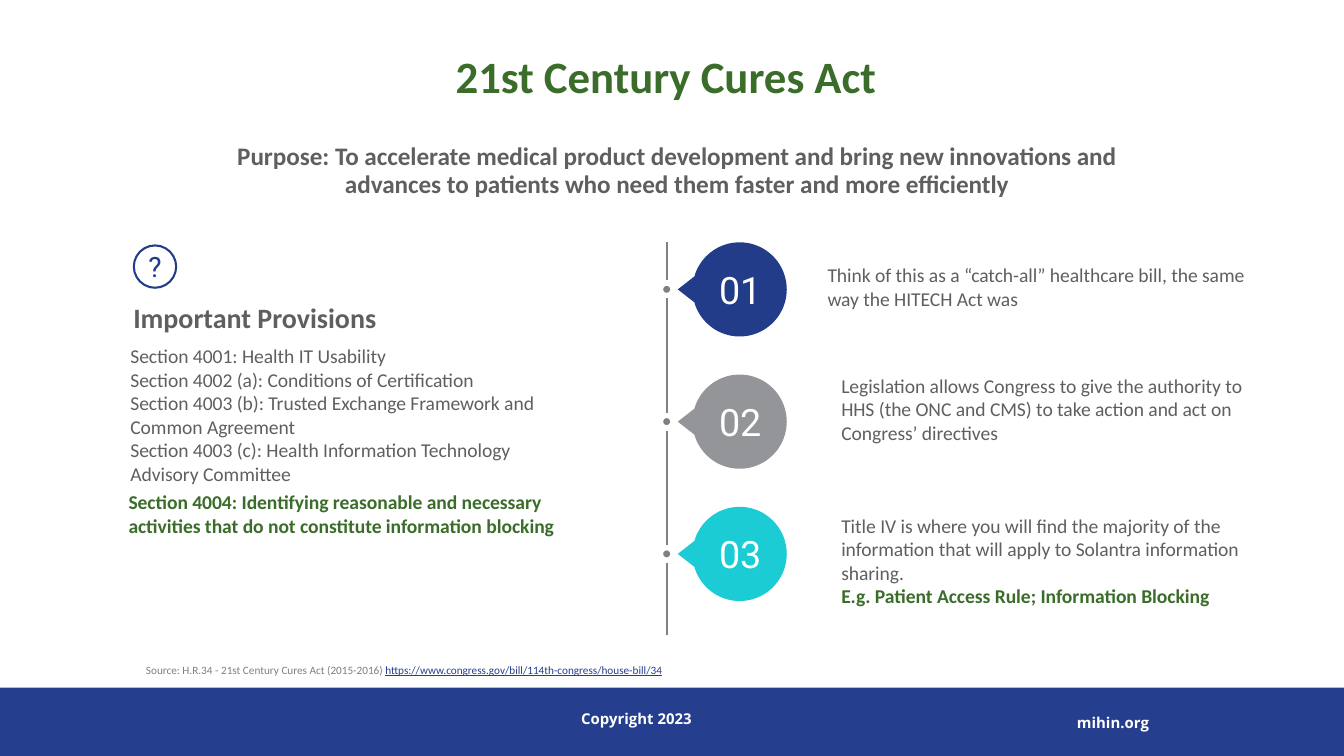
"""Build the 21st Century Cures Act overview slide."""
import math
from dataclasses import dataclass

from lxml import etree
from pptx import Presentation
from pptx import util as u
from pptx.dml import color
from pptx.enum import shapes, text
from pptx.oxml import ns

TITLE = "21st Century Cures Act"
PURPOSE = ("Purpose: To accelerate medical product development and bring new "
           "innovations and advances to patients who need them faster and more efficiently")
HEADING = "Important Provisions"
PROVISIONS = [
    "Section 4001: Health IT Usability",
    "Section 4002 (a): Conditions of Certification",
    "Section 4003 (b): Trusted Exchange Framework and Common Agreement",
    "Section 4003 (c): Health Information Technology Advisory Committee",
]
KEY_PROVISION = ("Section 4004: Identifying reasonable and necessary activities "
                 "that do not constitute information blocking")
STEPS = [
    ("01", "navy", (15.39, 4.85, 8.46, 1.14),
     [("Think of this as a “catch-all” healthcare bill, the same way the HITECH Act was", "body")]),
    ("02", "silver", (15.65, 6.93, 8.46, 1.6),
     [("Legislation allows Congress to give the authority to HHS (the ONC and CMS) "
       "to take action and act on Congress’ directives", "body")]),
    ("03", "cyan", (15.65, 9.58, 8.46, 2.06),
     [("Title IV is where you will find the majority of the information that will "
       "apply to Solantra information sharing.", "body"),
      ("E.g. Patient Access Rule; Information Blocking", "key")]),
]
SOURCE = [("Source: H.R.34 - 21st Century Cures Act (2015-2016) ", "source"),
          ("https://www.congress.gov/bill/114th-congress/house-bill/34", "link")]
FOOTER = [("Copyright 2023", (10.97, 13.41, 2.11, 0.33)),
          ("mihin.org", (20.04, 13.49, 1.68, 0.33))]

FIRST_Y, STEP_Y = 5.47, 2.5
LINE_X, LINE_TOP, LINE_BOTTOM = 12.6, 4.57, 12.01
DOT_SIZE, DOT_GAP = 0.13, 0.17
MARKER_X, MARKER_RADIUS, POINTER_REACH, POINTER_ANGLE = 13.98, 0.89, 1.17, 16


@dataclass(frozen=True)
class Theme:
    """Colours and type styles (size, font, colour, bold, underline)."""
    colors = {"navy": "223C89", "bar": "253E8E", "silver": "949599", "cyan": "1BCCD4",
              "green": "3B6D2A", "text": "5F5F5F", "line": "808080", "note": "7F7F7F",
              "white": "FFFFFF"}
    styles = {"title": (24, "Calibri", "green", True, False),
              "purpose": (13.5, "Calibri", "text", True, False),
              "heading": (15, "Calibri", "text", True, False),
              "body": (10.5, "Calibri", "text", False, False),
              "key": (10.5, "Calibri", "green", True, False),
              "number": (20.2, "Roboto", "white", False, False),
              "icon": (15, "Roboto", "navy", False, False),
              "source": (6, "Calibri", "note", False, False),
              "link": (6, "Calibri", "bar", False, True),
              "footer": (8, "Open Sans", "white", True, False)}


THEME = Theme()


def rgb(name):
    return color.RGBColor.from_string(THEME.colors[name])


def style_font(font, style):
    size, font.name, tint, font.bold, font.underline = THEME.styles[style]
    font.size = u.Pt(size)
    font.color.rgb = rgb(tint)


def place(shape, box):
    shape.left, shape.top, shape.width, shape.height = map(u.Cm, box)


def paint(shape, fill):
    shape.shadow.inherit = False
    shape.fill.solid()
    shape.fill.fore_color.rgb = rgb(fill)
    shape.line.fill.background()


def write(shape, lines, align="LEFT", anchor="TOP", insets=(0.25, 0.13), spacing=1, wrap=True):
    frame = shape.text_frame
    frame.word_wrap = wrap
    frame.auto_size = text.MSO_AUTO_SIZE.NONE
    frame.vertical_anchor = getattr(text.MSO_ANCHOR, anchor)
    frame.margin_left = frame.margin_right = u.Cm(insets[0])
    frame.margin_top = frame.margin_bottom = u.Cm(insets[1])
    for index, (line, style) in enumerate(lines):
        paragraph = frame.add_paragraph() if index else frame.paragraphs[0]
        paragraph.text = line
        paragraph.alignment = getattr(text.PP_ALIGN, align)
        paragraph.line_spacing = spacing
        paragraph.space_before = u.Pt(0)
        style_font(paragraph.font, style)


def add_text(slide, box, lines, **options):
    shape = slide.shapes.add_textbox(*map(u.Cm, box))
    write(shape, lines, **options)
    return shape


def add_ellipse(slide, center_x, center_y, size):
    box = (center_x - size / 2, center_y - size / 2, size, size)
    return slide.shapes.add_shape(shapes.MSO_SHAPE.OVAL, *map(u.Cm, box))


def add_marker(slide, center_y, number, fill):
    angles = range(180 + POINTER_ANGLE, 541 - POINTER_ANGLE, 4)
    arc = [(u.Cm(MARKER_X + MARKER_RADIUS * math.cos(math.radians(angle))),
            u.Cm(center_y + MARKER_RADIUS * math.sin(math.radians(angle)))) for angle in angles]
    builder = slide.shapes.build_freeform(u.Cm(MARKER_X - POINTER_REACH), u.Cm(center_y))
    builder.add_line_segments(arc, close=True)
    paint(builder.convert_to_shape(), fill)
    add_text(slide, (MARKER_X - 0.4, center_y - 0.43, 0.82, 0.86), [(number, "number")],
             align="CENTER", anchor="MIDDLE", insets=(0, 0), wrap=False)


def add_timeline(slide, centers):
    starts = [LINE_TOP] + [center + DOT_GAP for center in centers]
    ends = [center - DOT_GAP for center in centers] + [LINE_BOTTOM]
    for start, end in zip(starts, ends):
        line = slide.shapes.add_connector(
            shapes.MSO_CONNECTOR.STRAIGHT, *map(u.Cm, (LINE_X, start, LINE_X, end)))
        line.line.width = u.Pt(1)
        line.line.color.rgb = rgb("line")
        etree.SubElement(line._element.spPr, ns.qn("a:effectLst"))
    for center in centers:
        paint(add_ellipse(slide, LINE_X, center, DOT_SIZE), "line")


def add_provisions(slide, body):
    icon = add_ellipse(slide, 2.93, 5.04, 0.8)
    icon.shadow.inherit = False
    icon.fill.background()
    icon.line.color.rgb = rgb("navy")
    icon.line.width = u.Pt(1.1)
    write(icon, [("?", "icon")], align="CENTER", anchor="MIDDLE", insets=(0, 0), wrap=False)
    add_text(slide, (2.34, 5.46, 6.55, 1.14), [(HEADING, "heading")],
             anchor="MIDDLE", insets=(0.18, 0.1), spacing=0.9)
    place(body, (2.21, 6.38, 8.89, 3.4))
    body.text_frame.text = "\n".join(PROVISIONS)
    for paragraph in body.text_frame.paragraphs:
        properties = paragraph._p.get_or_add_pPr()
        properties.set("marL", "0")
        properties.set("indent", "0")
        etree.SubElement(properties, ns.qn("a:buNone"))
    frame = body.text_frame
    frame.auto_size = text.MSO_AUTO_SIZE.NONE
    for paragraph in frame.paragraphs:
        paragraph.space_before = u.Pt(0)
        style_font(paragraph.font, "body")
    add_text(slide, (2.18, 9.14, 8.89, 1.14), [(KEY_PROVISION, "key")])


def add_source(slide):
    shape = add_text(slide, (2.51, 12.4, 21.87, 0.51), [("", "source")])
    for part, style in SOURCE:
        run = shape.text_frame.paragraphs[0].add_run()
        run.text = part
        style_font(run.font, style)


def main():
    presentation = Presentation()
    presentation.slide_width, presentation.slide_height = u.Cm(25.4), u.Cm(14.29)
    slide = presentation.slides.add_slide(presentation.slide_layouts[1])
    title, body = slide.placeholders

    bar = slide.shapes.add_shape(shapes.MSO_SHAPE.RECTANGLE, *map(u.Cm, (0, 13, 25.4, 1.29)))
    paint(bar, "bar")
    for label, box in FOOTER:
        add_text(slide, box, [(label, "footer")], align="RIGHT", insets=(0, 0), wrap=False)

    centered = {"align": "CENTER", "anchor": "MIDDLE", "insets": (0.18, 0.1), "spacing": 0.9}
    place(title, (4.01, 0.61, 17.15, 1.78))
    write(title, [(TITLE, "title")], **centered)
    add_text(slide, (4.22, 2.92, 17.15, 0.64), [(PURPOSE, "purpose")], **centered)

    add_provisions(slide, body)
    centers = [FIRST_Y + index * STEP_Y for index in range(len(STEPS))]
    add_timeline(slide, centers)
    for center, (number, fill, box, lines) in zip(centers, STEPS):
        add_marker(slide, center, number, fill)
        add_text(slide, box, lines)
    add_source(slide)
    presentation.save("out.pptx")


if __name__ == "__main__":
    main()
